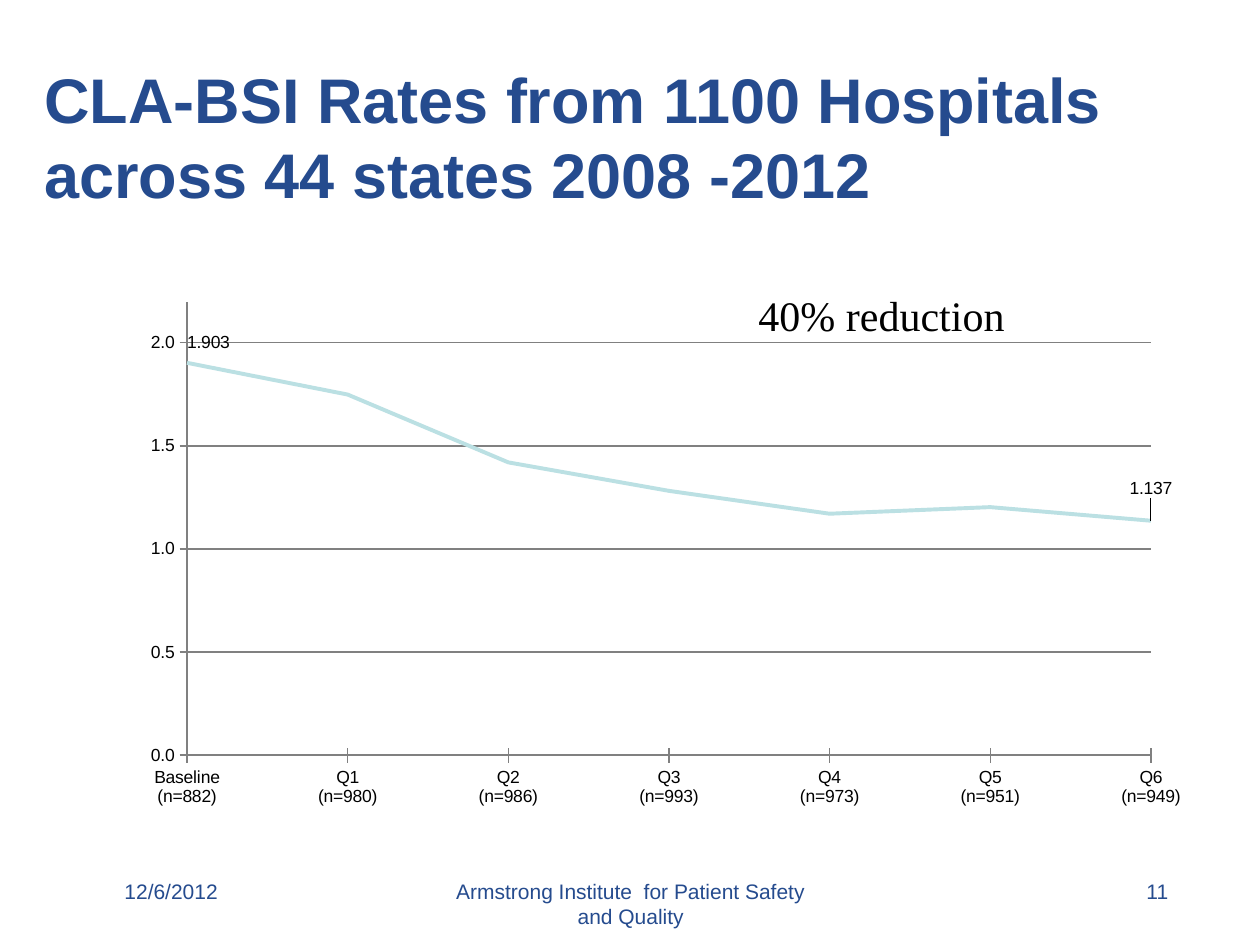
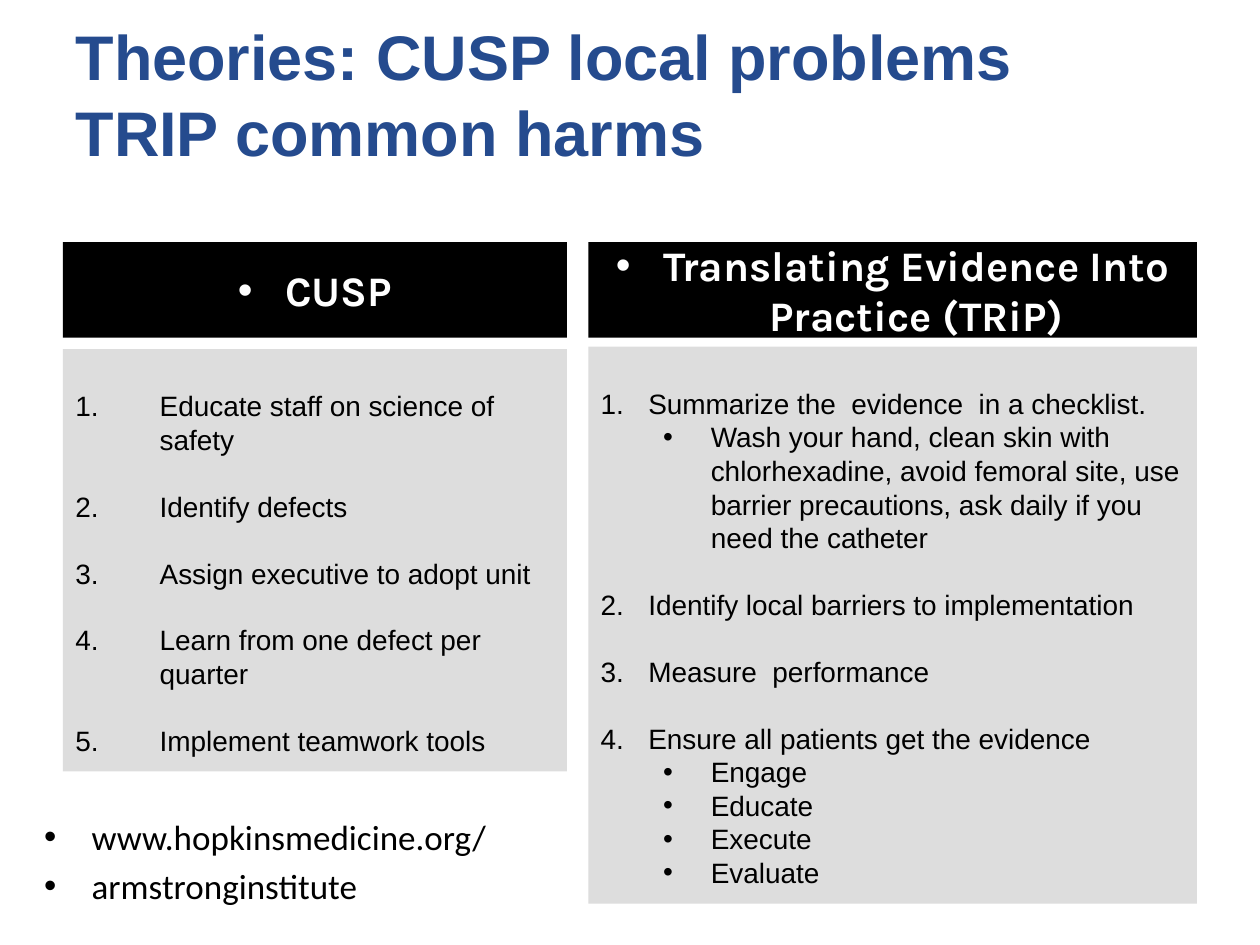
from dataclasses import dataclass

from lxml.etree import SubElement
from pptx import Presentation
from pptx.chart.data import CategoryChartData
from pptx.dml.color import RGBColor
from pptx.enum.chart import XL_CHART_TYPE, XL_LABEL_POSITION, XL_TICK_MARK
from pptx.enum.shapes import MSO_SHAPE
from pptx.enum.text import MSO_ANCHOR, MSO_AUTO_SIZE, PP_ALIGN
from pptx.oxml import parse_xml
from pptx.oxml.ns import nsdecls, qn
from pptx.util import Cm, Pt


@dataclass(frozen=True)
class Theme:
    blue: RGBColor = RGBColor(0x25, 0x4B, 0x8E)
    black: RGBColor = RGBColor(0, 0, 0)
    white: RGBColor = RGBColor(255, 255, 255)
    panel: RGBColor = RGBColor(0xDD, 0xDD, 0xDD)
    rate_line: RGBColor = RGBColor(0xBB, 0xE0, 0xE3)
    grid: RGBColor = RGBColor(0x80, 0x80, 0x80)
    sans: str = "Arial"
    serif: str = "Times New Roman"
    heading: str = "Karla"
    link: str = "Calibri"
    title_size: int = 36
    heading_size: int = 24
    link_size: int = 20
    body_size: int = 16
    footer_size: int = 12
    chart_size: int = 10


THEME = Theme()
HANG = 0.96  # hanging indent of bullets, in cm

RATES = {
    "Baseline\n(n=882)": 1.903,
    "Q1\n(n=980)": 1.749,
    "Q2\n(n=986)": 1.42,
    "Q3\n(n=993)": 1.282,
    "Q4\n(n=973)": 1.171,
    "Q5\n(n=951)": 1.203,
    "Q6\n(n=949)": 1.137,
}

# Each step is followed by its sub-points
CUSP_STEPS = [
    ("Educate staff on science of safety", []),
    ("Identify defects", []),
    ("Assign executive to adopt unit", []),
    ("Learn from one defect per quarter", []),
    ("Implement teamwork tools", []),
]
TRIP_STEPS = [
    ("Summarize the  evidence  in a checklist.",
     ["Wash your hand, clean skin with chlorhexadine, avoid femoral site, "
      "use barrier precautions, ask daily if you need the catheter"]),
    ("Identify local barriers to implementation", []),
    ("Measure  performance", []),
    ("Ensure all patients get the evidence",
     ["Engage", "Educate", "Execute", "Evaluate"]),
]


def place(shape, left, top, width, height):
    shape.left, shape.top = Cm(left), Cm(top)
    shape.width, shape.height = Cm(width), Cm(height)


def style_font(font, name, size, color, bold=False):
    font.name, font.size, font.bold = name, Pt(size), bold
    font.color.rgb = color


def style_text(frame, *style, align=PP_ALIGN.LEFT):
    for para in frame.paragraphs:
        para.alignment = align
        for span in para.runs:
            style_font(span.font, *style)


def add_marker(para, left, hang, numbered=False):
    """Give a paragraph a hanging bullet or number."""
    properties = para._p.get_or_add_pPr()
    properties.set("marL", str(Cm(left)))
    properties.set("indent", str(-Cm(hang)))
    SubElement(properties, qn("a:buFont"), typeface=THEME.sans)
    if numbered:
        SubElement(properties, qn("a:buAutoNum"), type="arabicPeriod")
    else:
        SubElement(properties, qn("a:buChar"), char="•")


def add_titled_page(deck, title, area):
    page = deck.slides.add_slide(deck.slide_layouts[5])
    box = page.shapes.title
    place(box, *area)
    frame = box.text_frame
    frame.text = title
    frame.word_wrap = True
    frame.auto_size = MSO_AUTO_SIZE.NONE
    frame.vertical_anchor = MSO_ANCHOR.TOP
    style_text(frame, THEME.sans, THEME.title_size, THEME.blue, True)
    return page


def add_text(page, text, area, *style, align=PP_ALIGN.LEFT):
    box = page.shapes.add_textbox(*map(Cm, area))
    frame = box.text_frame
    frame.word_wrap = True
    frame.text = text
    style_text(frame, *style, align=align)
    return frame


def add_footer(page, date, owner, number):
    parts = [
        (date, 2.26, 5.28, PP_ALIGN.LEFT),
        (owner, 8.69, 8.05, PP_ALIGN.CENTER),
        (number, 18.52, 5.28, PP_ALIGN.RIGHT),
    ]
    for text, left, width, align in parts:
        add_text(page, text, (left, 17.58, width, 0.84),
                 THEME.sans, THEME.footer_size, THEME.blue, align=align)


def add_panel(page, area, fill):
    panel = page.shapes.add_shape(MSO_SHAPE.RECTANGLE, *map(Cm, area))
    panel.shadow.inherit = False
    panel.fill.solid()
    panel.fill.fore_color.rgb = fill
    panel.line.fill.background()
    panel.text_frame.word_wrap = True
    return panel.text_frame


def add_heading(page, text, left, width):
    frame = add_panel(page, (left, 4.88, width, 1.93), THEME.black)
    frame.vertical_anchor = MSO_ANCHOR.MIDDLE
    frame.text = text
    add_marker(frame.paragraphs[0], HANG, HANG)
    style_text(frame, THEME.heading, THEME.heading_size, THEME.white, True,
               align=PP_ALIGN.CENTER)


def add_steps(page, steps, area, hang):
    frame = add_panel(page, area, THEME.panel)
    frame.vertical_anchor = MSO_ANCHOR.TOP
    frame.margin_top = Cm(0.8)
    for index, (step, points) in enumerate(steps):
        para = frame.add_paragraph() if index else frame.paragraphs[0]
        para.text = step
        add_marker(para, hang, hang, numbered=True)
        if index:
            para.space_before = Pt(19)
        for point in points:
            para = frame.add_paragraph()
            para.text = point
            para.level = 1
            add_marker(para, 2.22, HANG)
    style_text(frame, THEME.sans, THEME.body_size, THEME.black)


def style_axis(axis):
    axis.major_tick_mark = XL_TICK_MARK.CROSS
    axis.minor_tick_mark = XL_TICK_MARK.NONE
    axis.format.line.color.rgb = THEME.grid
    style_font(axis.tick_labels.font, THEME.sans, THEME.chart_size, THEME.black)


def manual_layout(x, y, width=None, height=None):
    """Layout of a plot area when a size is given, else a label offset."""
    values = [("x", x), ("y", y)]
    if width is not None:
        values = [("layoutTarget", "inner"), ("xMode", "edge"), ("yMode", "edge"),
                  *values, ("w", width), ("h", height)]
    items = "".join(f'<c:{name} val="{value}"/>' for name, value in values)
    return parse_xml(f'<c:layout {nsdecls("c")}><c:manualLayout>{items}'
                     f"</c:manualLayout></c:layout>")


def label_point(series, index, offset):
    label = series.points[index].data_label
    style_font(label.font, THEME.sans, THEME.chart_size, THEME.black)
    label.position = XL_LABEL_POSITION.ABOVE
    element = series._element.findall(f"{qn('c:dLbls')}/{qn('c:dLbl')}")[-1]
    element.insert(1, manual_layout(*offset))


def start_line_on_axis(value_axis):
    """Put the first category on the value axis; needs a major unit."""
    unit = value_axis._element.find(qn("c:majorUnit"))
    unit.addprevious(parse_xml(f'<c:crossBetween {nsdecls("c")} val="midCat"/>'))


def add_rate_chart(page, area):
    data = CategoryChartData(number_format="0.000")
    data.categories = list(RATES)
    data.add_series("Series 1", list(RATES.values()))
    chart = page.shapes.add_chart(XL_CHART_TYPE.LINE, *map(Cm, area), data).chart
    chart.has_legend = False
    chart.has_title = False
    style_font(chart.font, THEME.sans, THEME.chart_size, THEME.black)

    # Axes
    style_axis(chart.category_axis)
    rates = chart.value_axis
    style_axis(rates)
    rates.minimum_scale, rates.maximum_scale, rates.major_unit = 0, 2.2, 0.5
    rates.has_major_gridlines = True
    rates.major_gridlines.format.line.color.rgb = THEME.grid
    rates.tick_labels.number_format = "0.0"
    rates.tick_labels.number_format_is_linked = False
    start_line_on_axis(rates)

    # Line, labelled at its two ends
    plot = chart.plots[0]
    plot.vary_by_categories = False
    series = plot.series[0]
    series.smooth = False
    series.format.line.color.rgb = THEME.rate_line
    series.format.line.width = Pt(2.25)
    label_point(series, 0, (0.02, -0.01))
    label_point(series, len(RATES) - 1, (0, -0.03))
    series.data_labels.show_value = False

    # Plot area
    plot_area = chart._chartSpace.chart.plotArea
    for layout in plot_area.findall(qn("c:layout")):
        plot_area.remove(layout)
    plot_area.insert(0, manual_layout(0.07, 0.05, 0.9, 0.8))


def add_links(page, text, area):
    frame = add_text(page, text, area, THEME.link, THEME.link_size, THEME.black)
    for index, para in enumerate(frame.paragraphs):
        add_marker(para, HANG, HANG)
        if index:
            para.space_before = Pt(4)


def build_rates_page(deck):
    page = add_titled_page(
        deck, "CLA-BSI Rates from 1100 Hospitals across 44 states 2008 -2012",
        (0.64, 1.09, 23.22, 3.18))
    add_footer(page, "12/6/2012",
               "Armstrong Institute  for Patient Safety and Quality", "11")
    add_rate_chart(page, (2.26, 5.51, 21.59, 11.43))
    add_text(page, "40% reduction", (15.04, 5.72, 9.53, 1.3),
             THEME.serif, THEME.heading_size, THEME.black)


def build_theories_page(deck):
    page = add_titled_page(
        deck, "Theories: CUSP local problems\vTRIP common harms",
        (1.27, 0.23, 22.86, 2.87))
    add_heading(page, "CUSP", 1.27, 10.16)
    add_steps(page, CUSP_STEPS, (1.27, 7.04, 10.16, 8.51), 1.7)
    add_heading(page, "Translating Evidence Into Practice (TRiP)", 11.86, 12.27)
    add_steps(page, TRIP_STEPS, (11.86, 6.99, 12.27, 11.23), HANG)
    add_links(page, "www.hopkinsmedicine.org/\narmstronginstitute",
              (0.64, 16.31, 10.59, 2.7))


def main():
    deck = Presentation()
    deck.slide_width, deck.slide_height = Cm(25.4), Cm(19.05)
    build_rates_page(deck)
    build_theories_page(deck)
    deck.save("out.pptx")


if __name__ == "__main__":
    main()
